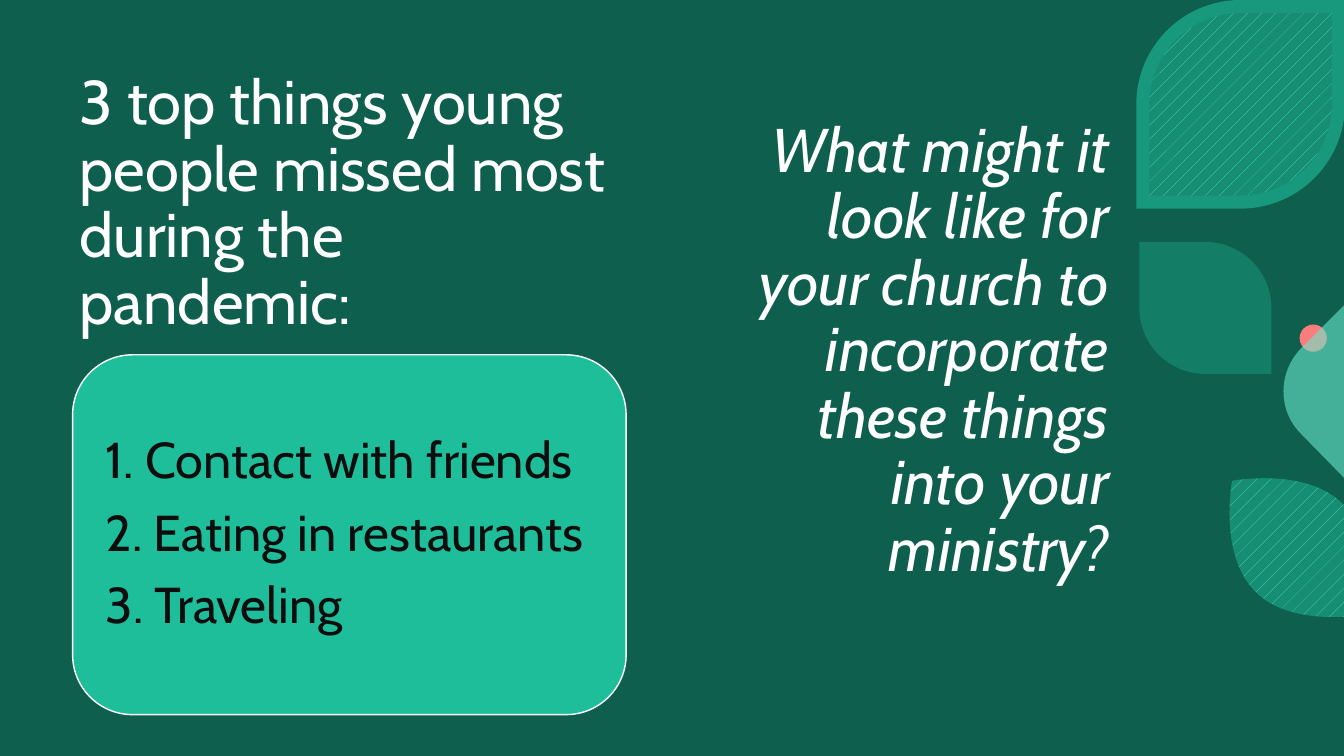
"""Builds the slide on what young people missed during the pandemic."""
from lxml.etree import SubElement
from pptx import Presentation
from pptx.dml.color import RGBColor
from pptx.enum.dml import MSO_PATTERN
from pptx.enum.shapes import MSO_SHAPE as Shape
from pptx.enum.text import MSO_ANCHOR as Anchor, MSO_AUTO_SIZE as Fit, PP_ALIGN as Align
from pptx.oxml.ns import qn
from pptx.util import Inches, Pt

TITLE = "3 top things young people missed most during the pandemic:"
MISSED = ["1. Contact with friends", "2. Eating in restaurants", "3. Traveling"]
ASK = ("What might it look like for your church to incorporate "
       "these things into your ministry?")
FONT = "Cabin"
HEX = {"base": "09392F", "veil": "18997E", "coral": "FD7C7C", "leaf": "178E74",
       "mint": "1EBE9B", "pale": "69E7CC", "hatch": "4BE3C2",
       "white": "FFFFFF", "ink": "0D0D0D"}
WIDE, HIGH = 13.33, 7.5
RIM = 0.13
LEAF = (11.27, 0, 2.07, 2.07)
INNER = (LEAF[0] + RIM, RIM, LEAF[2] - 2 * RIM, LEAF[3] - 2 * RIM)
CARD = (0.72, 3.52, 5.49, 3.57)
PAD = 0.18
SPROUT = [(13.3, 6.12), (WIDE, 6.12), (WIDE, 5.01), (13.32, 5),
          ((12.96, 4.63), (12.22, 4.77), (12.22, 4.77)),
          ((12.22, 4.77), (12.08, 5.5), (12.45, 5.87)),
          ((12.68, 6.1), (13.05, 6.13), (13.3, 6.12))]
PETAL = [(WIDE, 3.03), (WIDE, 4.74), (12.91, 4.31),
         ((12.67, 4.08), (12.67, 3.69), (12.91, 3.45))]
STEPS = 16


def tint(name):
    return RGBColor.from_string(HEX[name])


def paint(shape, name, alpha=100):
    shape.shadow.inherit = False
    shape.line.fill.background()
    fill = shape.fill
    if name == "hatch":
        fill.patterned()
        fill.pattern = MSO_PATTERN.PERCENT_5
        fill.fore_color.rgb, fill.back_color.rgb = tint("hatch"), tint("leaf")
        return shape
    fill.solid()
    fill.fore_color.rgb = tint(name)
    if alpha < 100:
        color = shape.element.spPr.find(qn("a:solidFill"))[0]
        SubElement(color, qn("a:alpha")).set("val", str(alpha * 1000))
    return shape


def block(slide, kind, box, name, alpha=100, bends=()):
    shape = slide.shapes.add_shape(kind, *map(Inches, box))
    for i, bend in enumerate(bends):
        shape.adjustments[i] = bend
    return paint(shape, name, alpha)


def trace(slide, parts, name, alpha=100):
    dots = []
    for part in parts:
        if isinstance(part[0], tuple):
            ends = (dots[-1], *part)
            for step in range(1, STEPS + 1):
                t = step / STEPS
                mix = ((1 - t) ** 3, 3 * t * (1 - t) ** 2, 3 * t * t * (1 - t), t ** 3)
                dots.append(tuple(sum(m * e[k] for m, e in zip(mix, ends)) for k in (0, 1)))
        else:
            dots.append(part)
    dots = [(Inches(x), Inches(y)) for x, y in dots]
    pen = slide.shapes.build_freeform(*dots[0])
    pen.add_line_segments(dots[1:], close=True)
    return paint(pen.convert_to_shape(), name, alpha)


def write(shape, box, lines, size, color, align=Align.LEFT, anchor=Anchor.TOP,
          italic=None, after=0, inset=None):
    shape.left, shape.top, shape.width, shape.height = map(Inches, box)
    frame = shape.text_frame
    frame.text = "\n".join(lines)
    frame.word_wrap, frame.auto_size = True, Fit.NONE
    frame.vertical_anchor = anchor
    if inset:
        frame.margin_left = frame.margin_right = Inches(inset)
        frame.margin_top = frame.margin_bottom = Inches(inset)
    for para in frame.paragraphs:
        para.alignment, para.line_spacing = align, 0.9
        para.space_before, para.space_after = Pt(0), Pt(after)
        for run in para.runs:
            font = run.font
            font.name, font.size, font.italic = FONT, Pt(size), italic
            font.color.rgb = tint(color)


def main():
    deck = Presentation()
    deck.slide_width, deck.slide_height = Inches(WIDE), Inches(HIGH)
    slide = deck.slides.add_slide(deck.slide_layouts[5])
    slide.background.fill.solid()
    slide.background.fill.fore_color.rgb = tint("base")

    block(slide, Shape.RECTANGLE, (0, 0, WIDE, HIGH), "veil", 40)
    block(slide, Shape.OVAL, (12.89, 3.22, 0.27, 0.27), "coral")
    leaf = Shape.ROUND_2_DIAG_RECTANGLE
    block(slide, leaf, (11.3, 2.4, 1.31, 1.31), "leaf", 65, (0, 0.5))
    trace(slide, SPROUT, "hatch")
    trace(slide, PETAL, "pale", 60)
    block(slide, leaf, LEAF, "mint", 60, (0.5, 0))
    block(slide, leaf, INNER, "hatch", bends=(0.5, 0))

    title = slide.shapes.title
    slide.shapes._spTree.append(title.element)
    write(title, (0.69, 0.94, 5.55, 2.46), [TITLE], 44, "white", anchor=Anchor.BOTTOM)
    ask = slide.shapes.add_textbox(0, 0, 0, 0)
    write(ask, (7.07, 1.13, 4.03, 5.72), [ASK], 44, "white", Align.RIGHT, italic=True)

    card = block(slide, Shape.ROUNDED_RECTANGLE, CARD, "mint")
    card.line.color.rgb, card.line.width = tint("white"), Pt(1)
    x, y, w, h = CARD
    items = slide.shapes.add_textbox(0, 0, 0, 0)
    write(items, (x + PAD, y + PAD, w - 2 * PAD, h - 2 * PAD), MISSED, 36, "ink",
          anchor=Anchor.MIDDLE, after=12.6, inset=0.15)
    deck.save("out.pptx")


if __name__ == "__main__":
    main()
